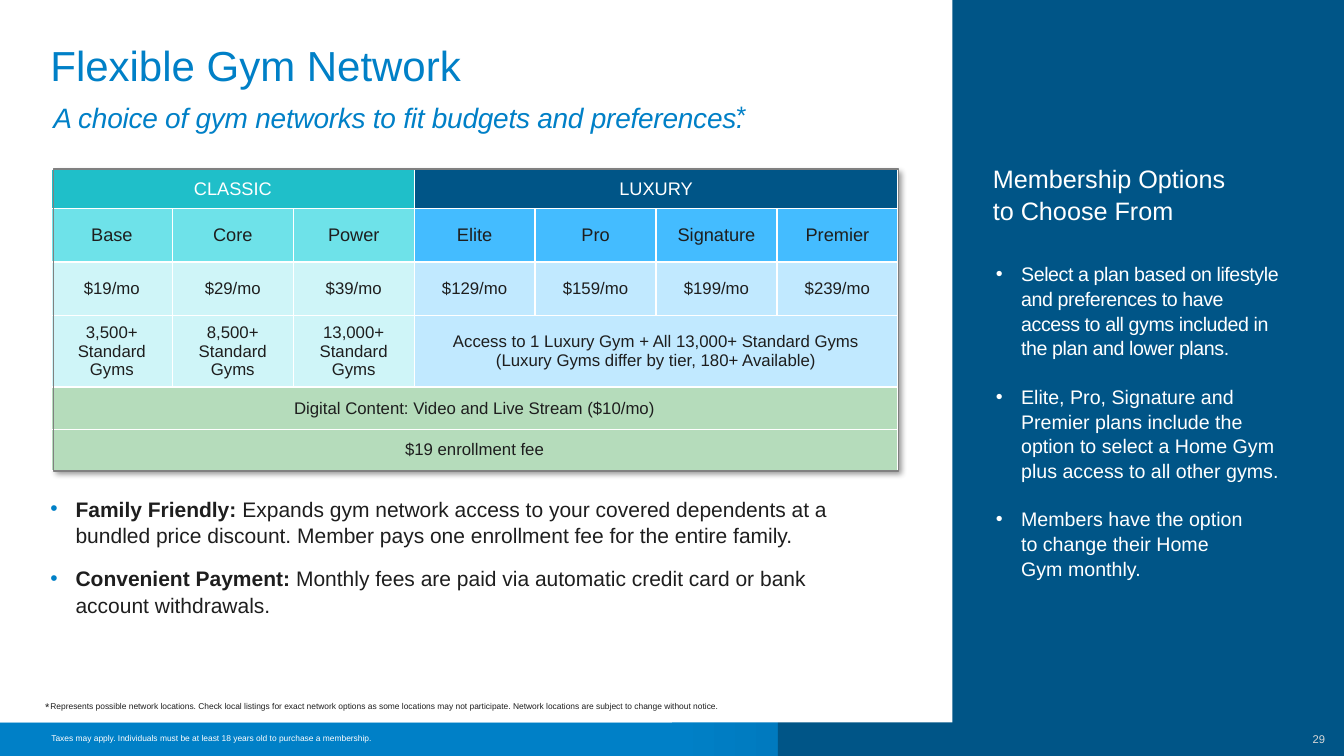
from lxml.etree import SubElement as Sub
from pptx import Presentation
from pptx.dml.color import RGBColor as Rgb
from pptx.enum.shapes import MSO_SHAPE as Kind
from pptx.enum.text import MSO_ANCHOR as Anchor, PP_ALIGN as Align
from pptx.oxml.ns import qn
from pptx.util import Inches, Pt

WIDE, HIGH = Inches(13.333), Inches(7.5)
COLS, ROWS = 160, 90
HUES = {
    "white": "FFFFFF", "ink": "1E1E1E", "blue": "0080C7", "navy": "005587",
    "teal": "1FBFC9", "aqua": "6EE2E9", "mist": "CFF5F8", "sky": "44BCFF",
    "ice": "C1E9FF", "green": "B5DCBB", "gray": "808080", "pale": "D9D9D9",
}
CARD = (6.36, 20.16, 100.6, 35.88)
GRID = (6.12, 20.16, 100.8, 35.88)
TALL = (4.68, 6.36, 6.36, 8.52, 5.04, 4.92)
TIERS = ("Base", "Core", "Power", "Elite", "Pro", "Signature", "Premier")
FEES = (19, 29, 39, 129, 159, 199, 239)
GYMS = ("3,500+", "8,500+", "13,000+")
ACCESS = ["Access to 1 Luxury Gym + All 13,000+ Standard Gyms",
          "(Luxury Gyms differ by tier, 180+ Available)"]
OFFERS = [
    [("Family Friendly: ", True),
     ("Expands gym network access to your covered dependents at a bundled "
      "price discount. Member pays one enrollment fee for the entire family.", False)],
    [("Convenient Payment: ", True),
     ("Monthly fees are paid via automatic credit card or bank account "
      "withdrawals.", False)],
]
PLANS = [
    "Select a plan based on lifestyle and preferences to have access to all "
    "gyms included in the plan and lower plans.",
    "Elite, Pro, Signature and Premier plans include the option to select a "
    "Home Gym plus access to all other gyms.",
    "Members have the option\nto change their Home\nGym monthly.",
]
NOTE = ("Represents possible network locations. Check local listings for exact "
        "network options as some locations may not participate. Network "
        "locations are subject to change without notice.")
TAX = "Taxes may apply. Individuals must be at least 18 years old to purchase a membership."


def tone(name):
    return Rgb.from_string(HUES[name])


def col(n):
    return round(WIDE * n / COLS)


def row(n):
    return round(HIGH * n / ROWS)


def place(x, y, w, h):
    return col(x), row(y), col(w), row(h)


def put(goal, **vals):
    for key, val in vals.items():
        setattr(goal, key, val)


def rect(slide, spot, fill=None, line=None):
    box = slide.shapes.add_shape(Kind.RECTANGLE, *place(*spot))
    box.shadow.inherit = False
    if fill:
        box.fill.solid()
        box.fill.fore_color.rgb = tone(fill)
    else:
        box.fill.background()
    if line:
        box.line.color.rgb = tone(line)
        box.line.width = Pt(1.25)
    else:
        box.line.fill.background()
    return box


def fade(box, first, last):
    box.fill.gradient()
    box.fill.gradient_angle = 0
    for stop, (name, pos) in zip(box.fill.gradient_stops, ((first, 0), (last, 1))):
        stop.color.rgb = tone(name)
        stop.position = pos


def shade(box):
    glow = box._element.spPr.find(qn("a:effectLst"))
    drop = Sub(glow, qn("a:outerShdw"), blurRad=str(Pt(4)), dist=str(Pt(3)),
               dir="2700000", algn="tl", rotWithShape="0")
    hue = Sub(drop, qn("a:srgbClr"), val="000000")
    Sub(hue, qn("a:alpha"), val="40000")


def dot(para, hue):
    prop = para._p.get_or_add_pPr()
    prop.set("marL", str(Inches(0.25)))
    prop.set("indent", str(-Inches(0.25)))
    Sub(Sub(prop, qn("a:buClr")), qn("a:srgbClr"), val=HUES[hue])
    Sub(prop, qn("a:buFont"), typeface="Arial")
    Sub(prop, qn("a:buChar"), char="•")


def write(para, parts, hue, size, track=0, **look):
    if isinstance(parts, str):
        parts = [(parts, False)]
    for words, bold in parts:
        for n, line in enumerate(words.split("\n")):
            if n:
                para.add_line_break()
            run = para.add_run()
            run.text = line
            put(run.font, name="Arial", size=Pt(size), bold=bold, **look)
            run.font.color.rgb = tone(hue)
            if track:
                run._r.get_or_add_rPr().set("spc", str(round(track * 100)))


def text(slide, spot, paras, hue, size, pad=(0, 0), anchor=Anchor.TOP,
         align=Align.LEFT, lead=1, gap=0, mark=None, track=(), **look):
    frame = slide.shapes.add_textbox(*place(*spot)).text_frame
    side, top = (Inches(n) for n in pad)
    put(frame, word_wrap=True, vertical_anchor=anchor, margin_left=side,
        margin_right=side, margin_top=top, margin_bottom=top)
    for n, parts in enumerate(paras):
        para = frame.paragraphs[0] if n == 0 else frame.add_paragraph()
        put(para, alignment=align, line_spacing=lead)
        if n:
            para.space_before = Pt(gap)
        if mark:
            dot(para, mark)
        write(para, parts, hue, size, track[n] if n < len(track) else 0, **look)


def edge(cell):
    prop = cell._tc.get_or_add_tcPr()
    for side in ("lnL", "lnR", "lnT", "lnB"):
        line = Sub(prop, qn("a:" + side), w=str(Pt(1)))
        Sub(Sub(line, qn("a:solidFill")), qn("a:srgbClr"), val=HUES["white"])


def fill(grid, r, c, span, paras, back, hue="ink", size=12):
    for n in range(c, c + span):
        cell = grid.cell(r, n)
        edge(cell)
        cell.fill.solid()
        cell.fill.fore_color.rgb = tone(back)
    cell = grid.cell(r, c)
    if span > 1:
        cell.merge(grid.cell(r, c + span - 1))
    cell.vertical_anchor = Anchor.MIDDLE
    frame = cell.text_frame
    for n, words in enumerate(paras):
        para = frame.paragraphs[0] if n == 0 else frame.add_paragraph()
        para.alignment = Align.CENTER
        write(para, words, hue, size)


def prices(slide):
    grid = slide.shapes.add_table(len(TALL), len(TIERS), *place(*GRID)).table
    put(grid, first_row=False, horz_banding=False)
    for band in grid.columns:
        band.width = col(GRID[2] / len(TIERS))
    for band, tall in zip(grid.rows, TALL):
        band.height = row(tall)
    low = len(GYMS)
    fill(grid, 0, 0, low, ["CLASSIC"], "teal", "white", 13)
    fill(grid, 0, low, len(TIERS) - low, ["LUXURY"], "navy", "white", 13)
    for n, (tier, fee) in enumerate(zip(TIERS, FEES)):
        head, body = ("aqua", "mist") if n < low else ("sky", "ice")
        fill(grid, 1, n, 1, [tier], head, size=13)
        fill(grid, 2, n, 1, [f"${fee}/mo"], body)
    for n, count in enumerate(GYMS):
        fill(grid, 3, n, 1, [count + "\nStandard Gyms"], "mist")
    fill(grid, 3, low, len(TIERS) - low, ACCESS, "ice")
    fill(grid, 4, 0, len(TIERS), ["Digital Content: Video and Live Stream ($10/mo)"], "green")
    fill(grid, 5, 0, len(TIERS), ["$19 enrollment fee"], "green")


def main():
    deck = Presentation()
    put(deck, slide_width=WIDE, slide_height=HIGH)
    slide = deck.slides.add_slide(deck.slide_layouts[6])
    rect(slide, (0, 86, COLS, 4), "blue")
    fade(rect(slide, (80, 86, 80, 4), "blue"), "blue", "navy")
    rect(slide, (92.6, 0, 67.4, ROWS), "navy")
    text(slide, (154, 86, 6, 4), ["29"], "pale", 8, anchor=Anchor.MIDDLE, align=Align.CENTER)
    rect(slide, (0, 0, 113.4, 86), "white")
    shade(rect(slide, CARD, "white"))
    prices(slide)
    rect(slide, CARD, line="gray")
    text(slide, (6, 5.4, 101.6, 6), ["Flexible Gym Network"], "blue", 30, lead=0.9)
    text(slide, (5.16, 11.4, 86.2, 8),
         ["A choice of gym networks to fit budgets and preferences."],
         "blue", 20, pad=(0.1, 0.05), track=(-0.2,), italic=True)
    text(slide, (86.52, 11.28, 9, 8), ["*"], "blue", 18, pad=(0.1, 0.05))
    text(slide, (118.2, 19.32, 37.9, 8), ["Membership Options\nto Choose From"],
         "white", 18, lead=1.05)
    text(slide, (118.56, 31.08, 34.56, 36.7), PLANS, "white", 14, lead=1.05,
         gap=17, mark="white", track=(-0.3,))
    text(slide, (6, 58.92, 98.64, 22.56), OFFERS, "ink", 15, lead=1.05, gap=12, mark="blue")
    text(slide, (4.2, 83.4, 1.7, 1.5), ["*"], "ink", 8, align=Align.RIGHT)
    text(slide, (6, 83.2, 81.2, 1.5), [NOTE], "ink", 6, anchor=Anchor.BOTTOM)
    text(slide, (6.12, 87.12, 81.2, 1.32), [TAX], "white", 6, anchor=Anchor.BOTTOM)
    deck.save("out.pptx")


if __name__ == "__main__":
    main()
